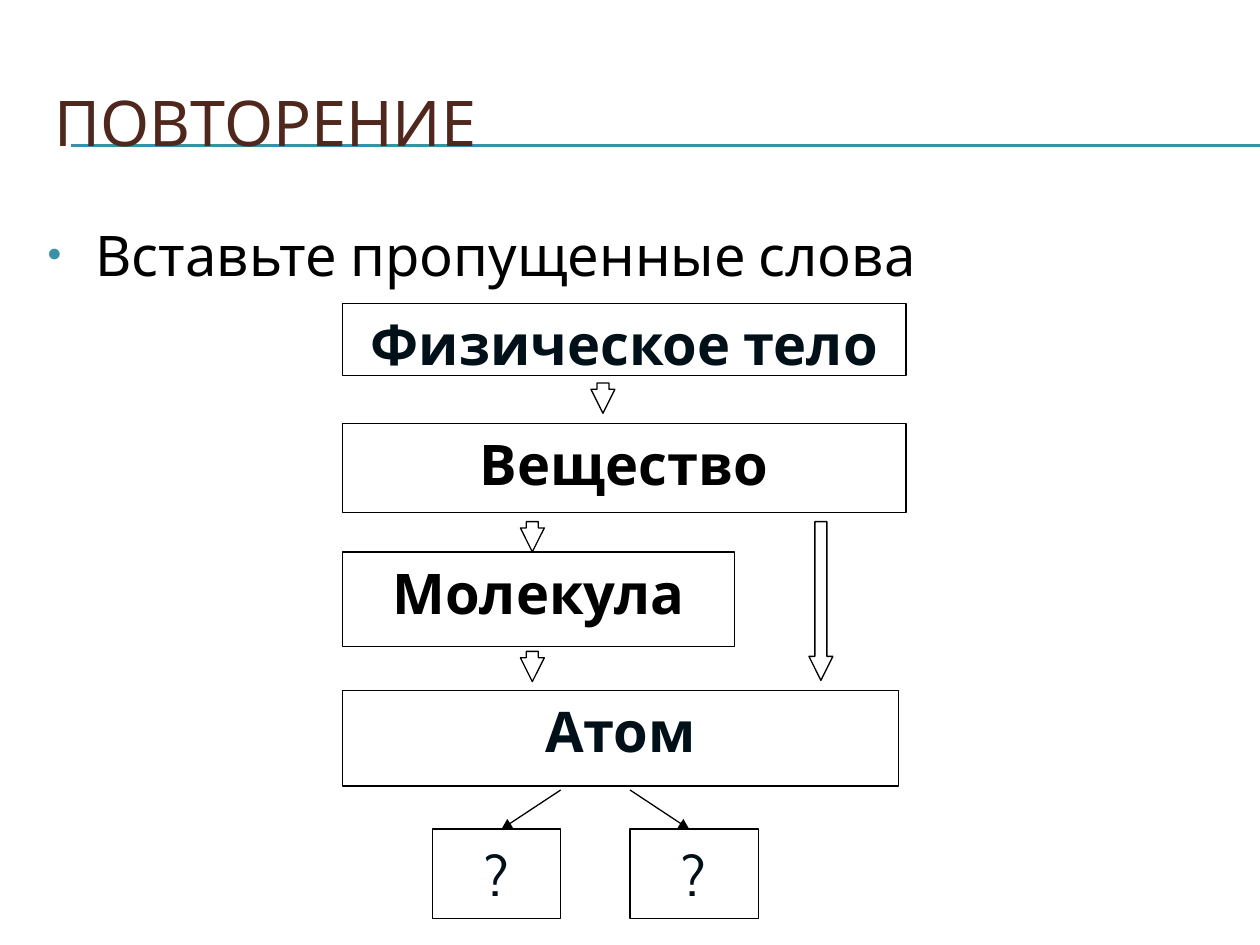
from dataclasses import dataclass

import pptx
import pptx.dml.color
import pptx.enum.shapes
import pptx.enum.text
import pptx.oxml
import pptx.oxml.ns
import pptx.util

Inches = pptx.util.Inches
RGBColor = pptx.dml.color.RGBColor
Align = pptx.enum.text.PP_ALIGN
Anchor = pptx.enum.text.MSO_ANCHOR
Preset = pptx.enum.shapes.MSO_SHAPE

BLACK = RGBColor(0x00, 0x00, 0x00)
WHITE = RGBColor(0xFF, 0xFF, 0xFF)
INK = RGBColor(0x00, 0x10, 0x18)
BROWN = RGBColor(0x4F, 0x27, 0x1C)
TEAL = RGBColor(0x38, 0x91, 0xA7)

FONT = "Cabin"
LINE_WIDTH = pptx.util.Pt(0.75)
CHAIN_LEFT = 2.72
ARROW_WIDTH = 0.19
BRANCH_TOP, BRANCH_BOTTOM = 6.27, 6.58


@dataclass
class Box:
    text: str
    left: float
    top: float
    width: float
    height: float
    color: RGBColor = INK
    bold: bool = True
    anchor: Anchor = Anchor.TOP
    wrap: bool = True


@dataclass
class BlockArrow:
    left: float
    top: float
    height: float = 0.24


@dataclass
class Line:
    start: tuple[float, float]
    end: tuple[float, float]
    color: RGBColor = BLACK
    arrowhead: bool = False


HEADING_RULES = [Line((0.56, y), (10, y), TEAL) for y in (1.15, 1.16)]

CONCEPTS = [
    Box("Физическое тело", CHAIN_LEFT, 2.41, 4.47, 0.57),
    Box("Вещество", CHAIN_LEFT, 3.36, 4.47, 0.71, BLACK),
    Box("Молекула", CHAIN_LEFT, 4.38, 3.11, 0.75, BLACK),
    Box("Атом", CHAIN_LEFT, 5.48, 4.41, 0.76),
]
UNKNOWNS = [
    Box("?", left, BRANCH_BOTTOM, 1.02, 0.71, bold=False, anchor=Anchor.MIDDLE, wrap=False)
    for left in (3.43, 5)
]
BLOCK_ARROWS = [
    BlockArrow(4.69, 3.04),
    BlockArrow(4.13, 4.14),
    BlockArrow(4.13, 5.17),
    BlockArrow(6.42, 4.14, 1.26),
]
BRANCHES = [
    Line((start, BRANCH_TOP), (end, BRANCH_BOTTOM), arrowhead=True)
    for start, end in ((4.45, 3.98), (5, 5.47))
]


def write_text(holder, text: str, *, size=32, color=BLACK, bold=False,
               align=Align.LEFT, anchor=Anchor.TOP, wrap=True):
    """Put one formatted paragraph into a shape and return the paragraph."""
    frame = holder.text_frame
    frame.word_wrap = wrap
    frame.auto_size = pptx.enum.text.MSO_AUTO_SIZE.NONE
    frame.vertical_anchor = anchor
    paragraph = frame.paragraphs[0]
    paragraph.alignment = align
    run = paragraph.add_run()
    run.text = text
    run.font.name = FONT
    run.font.size = pptx.util.Pt(size)
    run.font.bold = bold
    run.font.color.rgb = color
    return paragraph


def add_bullet(paragraph, indent: float) -> None:
    properties = paragraph._p.get_or_add_pPr()
    properties.set("marL", str(Inches(indent)))
    properties.set("indent", str(-Inches(indent)))
    namespace = pptx.oxml.ns.nsdecls("a")
    for xml in (
        f'<a:buClr {namespace}><a:srgbClr val="{TEAL}"/></a:buClr>',
        f'<a:buSzPct {namespace} val="70000"/>',
        f'<a:buFont {namespace} typeface="Arial"/>',
        f'<a:buChar {namespace} char="•"/>',
    ):
        properties.append(pptx.oxml.parse_xml(xml))


def draw_outlined(slide, preset: Preset, left: float, top: float, width: float, height: float):
    outlined = slide.shapes.add_shape(
        preset, Inches(left), Inches(top), Inches(width), Inches(height))
    outlined.shadow.inherit = False
    outlined.fill.solid()
    outlined.fill.fore_color.rgb = WHITE
    outlined.line.color.rgb = BLACK
    outlined.line.width = LINE_WIDTH
    return outlined


def draw_box(slide, box: Box) -> None:
    outlined = draw_outlined(slide, Preset.RECTANGLE, box.left, box.top, box.width, box.height)
    write_text(outlined, box.text, color=box.color, bold=box.bold,
               align=Align.CENTER, anchor=box.anchor, wrap=box.wrap)


def draw_block_arrow(slide, arrow: BlockArrow) -> None:
    outlined = draw_outlined(
        slide, Preset.DOWN_ARROW, arrow.left, arrow.top, ARROW_WIDTH, arrow.height)
    outlined.adjustments[0] = 0.5
    outlined.adjustments[1] = 1


def draw_line(slide, line: Line) -> None:
    connector = slide.shapes.add_connector(
        pptx.enum.shapes.MSO_CONNECTOR.STRAIGHT,
        *(Inches(value) for value in (*line.start, *line.end)))
    connector.line.color.rgb = line.color
    connector.line.width = LINE_WIDTH
    namespace = pptx.oxml.ns.nsdecls("a")
    if line.arrowhead:
        connector.line._get_or_add_ln().append(
            pptx.oxml.parse_xml(f'<a:tailEnd {namespace} type="triangle"/>'))
    connector._element.spPr.append(pptx.oxml.parse_xml(f"<a:effectLst {namespace}/>"))


def main() -> None:
    deck = pptx.Presentation()
    deck.slide_width, deck.slide_height = Inches(10), Inches(7.5)
    slide = deck.slides.add_slide(deck.slide_layouts[5])

    # Heading over its rules
    for rule in HEADING_RULES:
        draw_line(slide, rule)
    heading = slide.shapes.title
    heading.left, heading.top = Inches(0.33), Inches(0.5)
    heading.width, heading.height = Inches(9.5), Inches(0.92)
    write_text(heading, "ПОВТОРЕНИЕ", size=36, color=BROWN, anchor=Anchor.MIDDLE)
    slide.shapes._spTree.append(heading._element)

    # Task
    task = slide.shapes.add_textbox(Inches(0.28), Inches(1.7), Inches(9.5), Inches(4.95))
    add_bullet(write_text(task, "Вставьте пропущенные слова"), 0.38)

    # Chain of concepts, ending in two unknowns
    for box in CONCEPTS:
        draw_box(slide, box)
    for arrow in BLOCK_ARROWS:
        draw_block_arrow(slide, arrow)
    for branch in BRANCHES:
        draw_line(slide, branch)
    for box in UNKNOWNS:
        draw_box(slide, box)

    deck.save("out.pptx")


if __name__ == "__main__":
    main()
